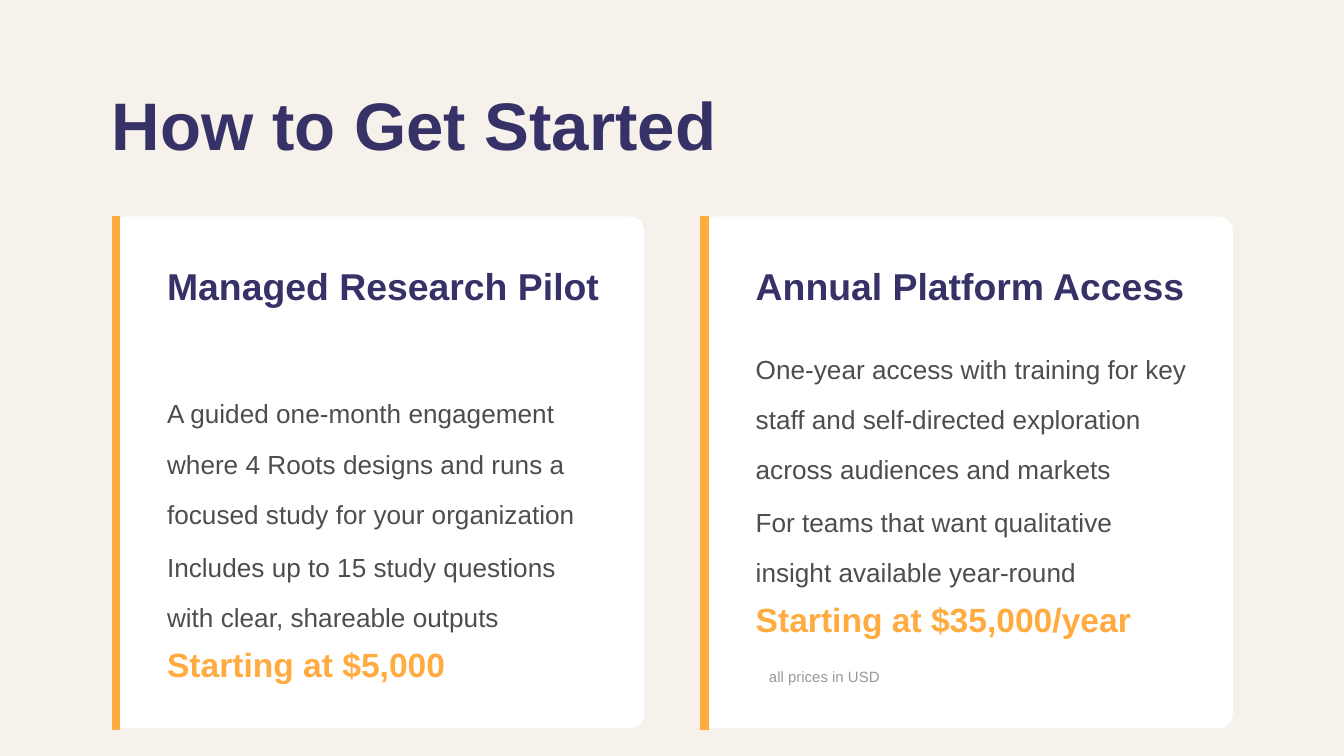
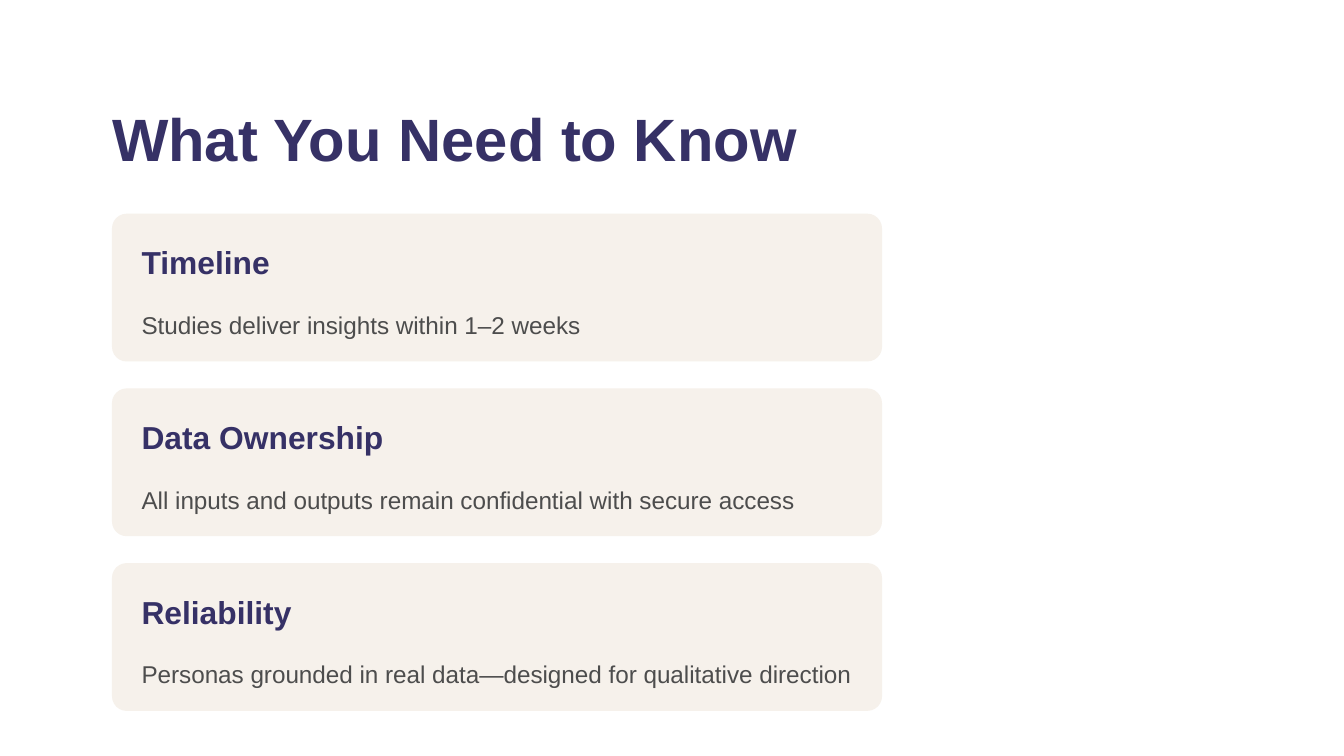
from pptx import Presentation
from pptx.dml.color import RGBColor
from pptx.enum.shapes import MSO_CONNECTOR as Connector, MSO_SHAPE as Shape
from pptx.enum.text import MSO_ANCHOR as Anchor, MSO_AUTO_SIZE as AutoSize
from pptx.oxml.ns import qn
from pptx.util import Inches, Pt
from lxml.etree import SubElement

INDIGO = RGBColor(0x36, 0x31, 0x66)
AMBER = RGBColor(0xFF, 0xAB, 0x40)
CREAM = RGBColor(0xF6, 0xF1, 0xEB)
WHITE = RGBColor(0xFF, 0xFF, 0xFF)
CHARCOAL = RGBColor(0x4D, 0x4D, 0x4D)
GREY = RGBColor(0x99, 0x99, 0x99)

MARGIN = 10 / 12
CORNER = 0.11

OFFERS = [
    ("Managed Research Pilot", 0.65, 2.82,
     "A guided one-month engagement where 4 Roots designs and runs a "
     "focused study for your organization",
     "Includes up to 15 study questions with clear, shareable outputs",
     "Starting at $5,000"),
    ("Annual Platform Access", 0.32, 2.49,
     "One-year access with training for key staff and self-directed "
     "exploration across audiences and markets",
     "For teams that want qualitative insight available year-round",
     "Starting at $35,000/year"),
]
FACTS = [
    ("Timeline", "Studies deliver insights within 1–2 weeks"),
    ("Data Ownership",
     "All inputs and outputs remain confidential with secure access"),
    ("Reliability",
     "Personas grounded in real data—designed for qualitative direction"),
]


class Deck:
    """Holds the shared style and draws on the current slide."""

    font = "Arial"

    def __init__(self):
        self.show = Presentation()
        self.show.slide_width = Inches(10)
        self.show.slide_height = Inches(10 * 9 / 16)
        self.slide = None

    def new_slide(self, background):
        self.slide = self.show.slides.add_slide(self.show.slide_layouts[6])
        fill = self.slide.background.fill
        fill.solid()
        fill.fore_color.rgb = background

    def text(self, words, left, top, width, height, size, color,
             bold=False, spacing=None, inset=0, fit=AutoSize.NONE):
        box = self.slide.shapes.add_textbox(*map(Inches, (left, top, width, height)))
        frame = box.text_frame
        margins = dict.fromkeys(
            ("margin_left", "margin_top", "margin_right", "margin_bottom"), Inches(inset))
        layout = {"word_wrap": True, "auto_size": fit, "vertical_anchor": Anchor.TOP}
        for name, value in (margins | layout).items():
            setattr(frame, name, value)
        paragraph = frame.paragraphs[0]
        paragraph.line_spacing = spacing
        run = paragraph.add_run()
        run.text = words
        for name, value in {"name": self.font, "size": Pt(size), "bold": bold}.items():
            setattr(run.font, name, value)
        run.font.color.rgb = color

    def title(self, words, top, width, height, size):
        self.text(words, MARGIN, top, width, height, size, INDIGO, bold=True)

    def card(self, left, top, width, height, color):
        panel = self.slide.shapes.add_shape(
            Shape.ROUNDED_RECTANGLE, *map(Inches, (left, top, width, height)))
        panel.adjustments[0] = CORNER / min(width, height)
        panel.shadow.inherit = False
        panel.fill.solid()
        panel.fill.fore_color.rgb = color
        panel.line.fill.background()

    def accent(self, x, top, bottom):
        stripe = self.slide.shapes.add_connector(
            Connector.STRAIGHT, *map(Inches, (x, top, x, bottom)))
        stripe.line.color.rgb = AMBER
        stripe.line.width = Pt(4.5)
        SubElement(stripe._element.spPr, qn("a:effectLst"))

    def save(self):
        self.show.save("out.pptx")


def pricing(deck):
    """Draws the two offers side by side."""
    deck.new_slide(CREAM)
    deck.title("How to Get Started", 0.62, 8.5, 0.57, 36)
    top, width, pitch = 1.61, 3.96, 4.38
    for column, (name, name_height, start, summary, detail, price) in enumerate(OFFERS):
        left = MARGIN + column * pitch
        inner, measure = left + 0.41, 3.27
        deck.card(left, top, width, 3.81, WHITE)
        deck.accent(left + 0.03, top, 5.43)
        deck.text(name, inner, 1.96, measure, name_height, 20, INDIGO, bold=True)
        deck.text(summary, inner, start, measure, 0.93, 14, CHARCOAL, spacing=1.6)
        deck.text(detail, inner, start + 1.14, measure, 0.62, 14, CHARCOAL, spacing=1.6)
        deck.text(price, inner, start + 1.97, measure, 0.29, 18, AMBER, bold=True)
    deck.text("all prices in USD", inner, 4.9, 1.51, 0.34, 8, GREY,
              inset=0.1, fit=AutoSize.SHAPE_TO_FIT_TEXT)


def essentials(deck):
    """Draws the stacked facts."""
    deck.new_slide(WHITE)
    deck.title("What You Need to Know", 0.76, 5.85, 0.51, 32)
    inner, measure = MARGIN + 0.22, 5.39
    for row, (topic, answer) in enumerate(FACTS):
        top = 1.59 + row * 1.3
        deck.card(MARGIN, top, 5.73, 1.1, CREAM)
        deck.text(topic, inner, top + 0.22, measure, 0.28, 17, INDIGO, bold=True)
        deck.text(answer, inner, top + 0.63, measure, 0.25, 13, CHARCOAL, spacing=1.4)


def main():
    deck = Deck()
    pricing(deck)
    essentials(deck)
    deck.save()


if __name__ == "__main__":
    main()
